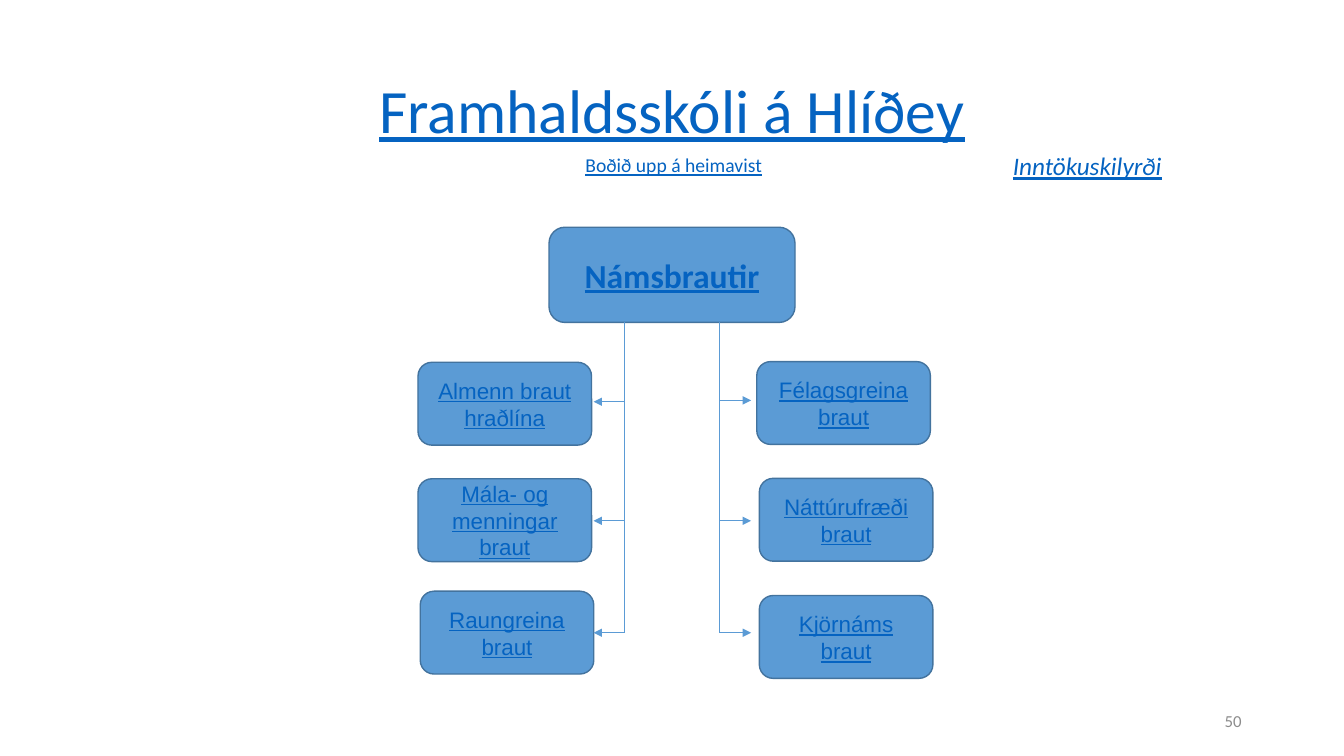
from lxml import etree
from pptx import Presentation
from pptx.dml.color import RGBColor
from pptx.enum.shapes import MSO_CONNECTOR, MSO_SHAPE
from pptx.enum.text import MSO_ANCHOR, PP_ALIGN
from pptx.oxml.ns import qn
from pptx.util import Pt

LINK = RGBColor(0x05, 0x63, 0xC1)
BLUE = RGBColor(0x5B, 0x9B, 0xD5)
EDGE = RGBColor(0x43, 0x73, 0x9E)
GRAY = RGBColor(0x8C, 0x8C, 0x8C)
ROUNDED = MSO_SHAPE.ROUNDED_RECTANGLE
STRAIGHT = MSO_CONNECTOR.STRAIGHT
MIDDLE = MSO_ANCHOR.MIDDLE
TOP = MSO_ANCHOR.TOP
LEFT, CENTER, RIGHT = PP_ALIGN.LEFT, PP_ALIGN.CENTER, PP_ALIGN.RIGHT


def set_text(sp, text, size, font="Calibri", color=LINK, align=CENTER,
             anchor=MIDDLE, underline=True, bold=False, italic=False):
    tf = sp.text_frame
    tf.word_wrap = True
    tf.vertical_anchor = anchor
    tf.text = text
    for p in tf.paragraphs:
        p.alignment = align
        p.font.name = font
        p.font.size = Pt(size)
        p.font.color.rgb = color
        p.font.underline = underline
        p.font.bold = bold
        p.font.italic = italic


def add_line(x1, y1, x2, y2, arrow=False):
    c = s.shapes.add_connector(STRAIGHT, Pt(x1), Pt(y1), Pt(x2), Pt(y2))
    c.line.color.rgb = BLUE
    c.line.width = Pt(0.5)
    if arrow:
        etree.SubElement(c.line._get_or_add_ln(), qn("a:tailEnd"), type="triangle")
    etree.SubElement(c._element.spPr, qn("a:effectLst"))


prs = Presentation()
prs.slide_width = Pt(960)
prs.slide_height = Pt(540)
s = prs.slides.add_slide(prs.slide_layouts[5])

title = s.shapes.title
title.left, title.top, title.width, title.height = Pt(66), Pt(28.8), Pt(828), Pt(104.4)
set_text(title, "Framhaldsskóli á Hlíðey", 44)
title.text_frame.paragraphs[0].line_spacing = 0.9

labels = [
    ("Boðið upp á heimavist", 411.1, 105.8, 164, 24.5,
     dict(size=14, align=LEFT, anchor=TOP)),
    ("Inntökuskilyrði", 716.4, 104, 140, 29,
     dict(size=18, align=LEFT, anchor=TOP, italic=True)),
    ("50", 678, 500.5, 216, 28.8,
     dict(size=12, align=RIGHT, color=GRAY, underline=False)),
]
for text, x, y, w, h, style in labels:
    sp = s.shapes.add_textbox(Pt(x), Pt(y), Pt(w), Pt(h))
    set_text(sp, text, **style)

branch = dict(size=16, font="Arial")
boxes = [
    ("Námsbrautir", 392.2, 162.3, 175.7, 68, dict(size=24, bold=True)),
    ("Almenn braut hraðlína", 298.6, 258.8, 124, 59.2, branch),
    ("Mála- og menningar\nbraut", 298.6, 342, 124, 59.2, branch),
    ("Raungreina braut", 300.2, 422.3, 124, 59.2, branch),
    ("Félagsgreina braut", 540.6, 258.3, 124, 59.2, branch),
    ("Náttúrufræði braut", 542.4, 341.7, 124, 59.2, branch),
    ("Kjörnáms braut", 542.4, 425.4, 124, 59.2, branch),
]
for text, x, y, w, h, style in boxes:
    sp = s.shapes.add_shape(ROUNDED, Pt(x), Pt(y), Pt(w), Pt(h))
    sp.shadow.inherit = False
    sp.fill.solid()
    sp.fill.fore_color.rgb = BLUE
    sp.line.color.rgb = EDGE
    sp.line.width = Pt(1)
    set_text(sp, text, **style)

for trunk_x, tip_x, first_y in [(446, 424, 287), (514, 536.5, 286)]:
    add_line(trunk_x, 230, trunk_x, 452)
    for y in (first_y, 372, 452):
        add_line(trunk_x, y, tip_x, y, arrow=True)

prs.save("out.pptx")
